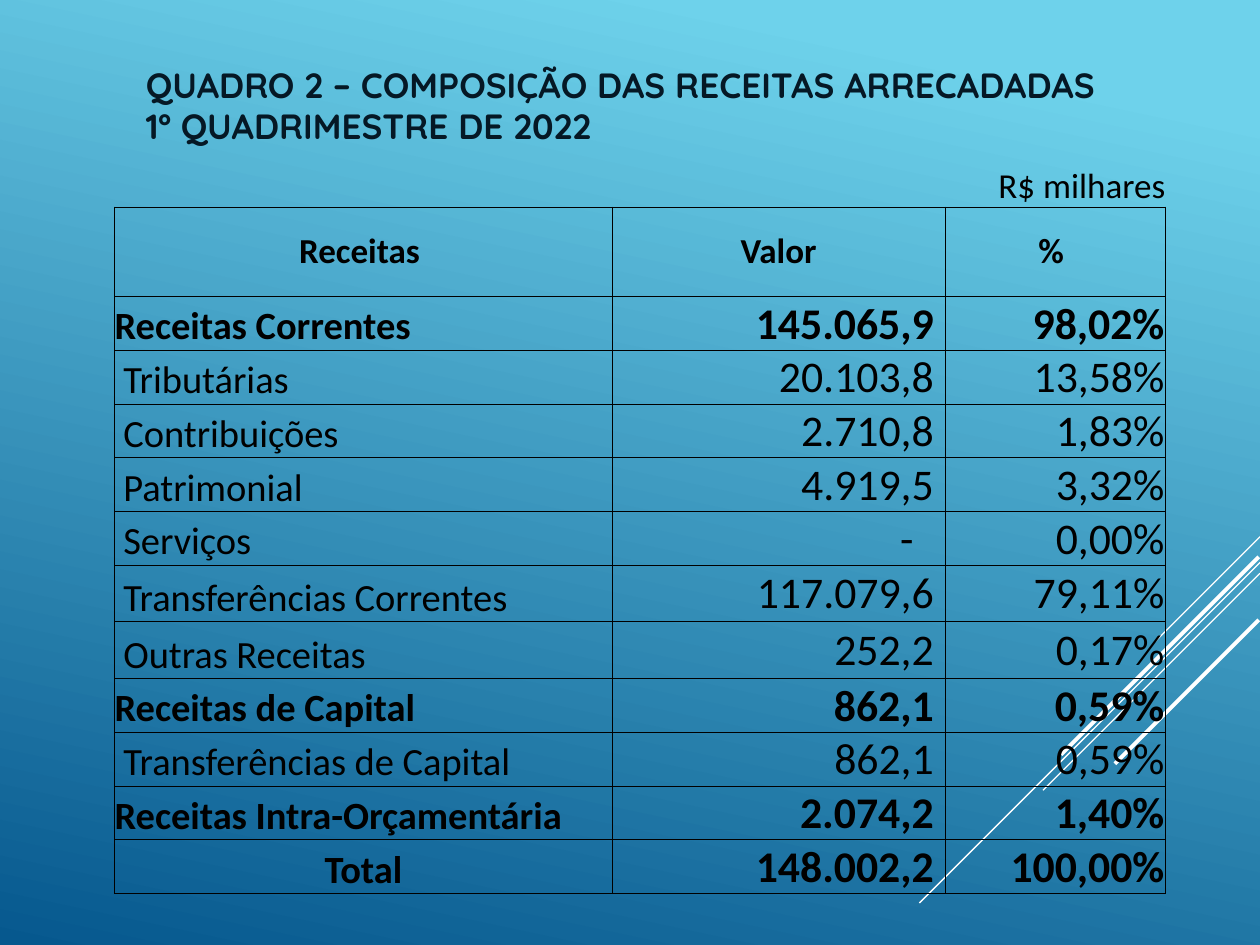
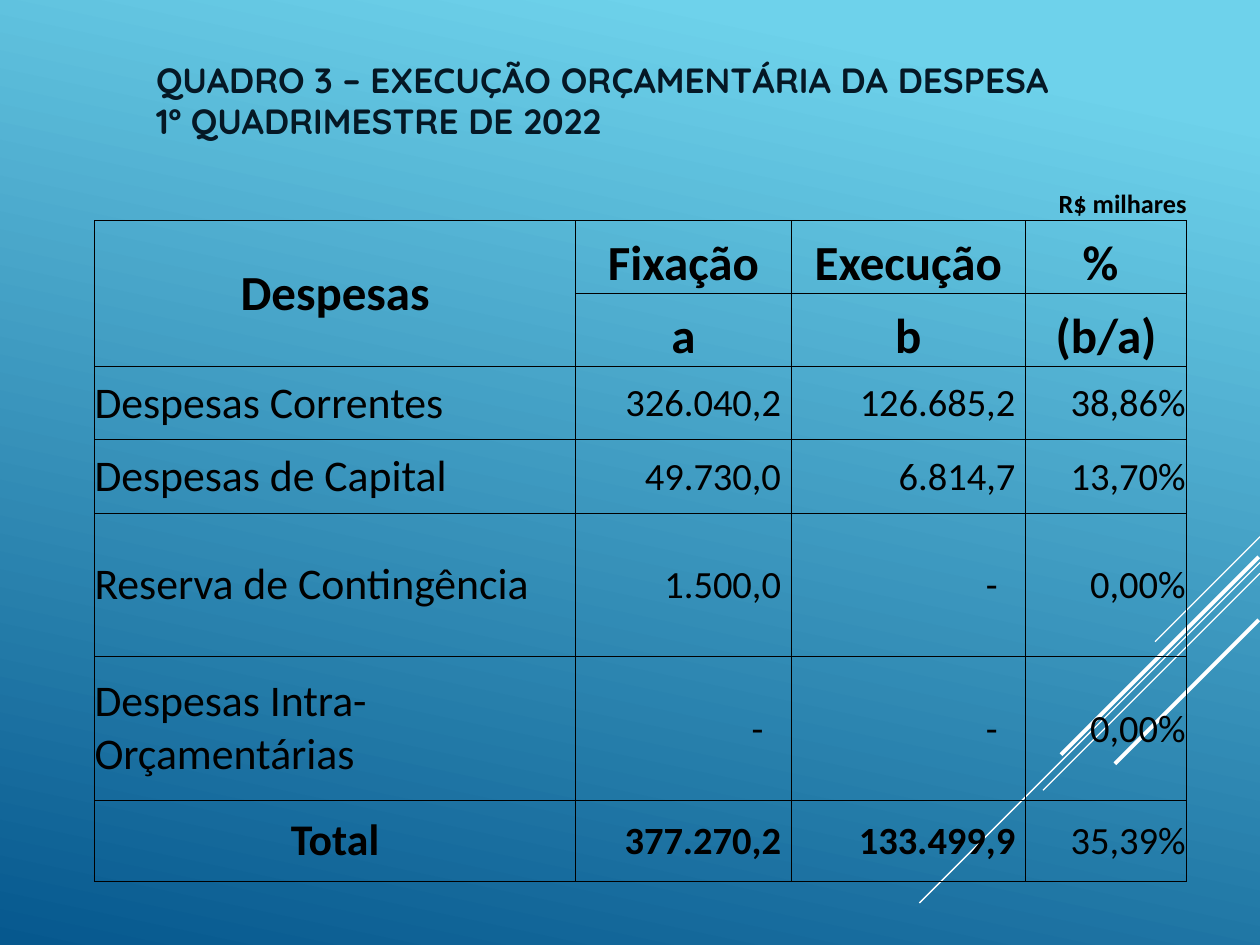
from dataclasses import dataclass

from lxml.etree import SubElement
from pptx import Presentation
from pptx.dml.color import RGBColor
from pptx.enum.shapes import MSO_CONNECTOR
from pptx.enum.text import MSO_ANCHOR, PP_ALIGN
from pptx.oxml import parse_xml
from pptx.oxml.ns import nsdecls, qn
from pptx.util import Pt


@dataclass(frozen=True)
class Theme:
    sky: RGBColor = RGBColor(0x6E, 0xD2, 0xEB)
    deep: RGBColor = RGBColor(0x06, 0x58, 0x8E)
    title: RGBColor = RGBColor(0x05, 0x18, 0x25)
    ink: RGBColor = RGBColor(0, 0, 0)
    stripe: RGBColor = RGBColor(0xFF, 0xFF, 0xFF)
    title_font: str = "Quicksand"
    table_font: str = "Calibri"
    title_size: int = 20
    grid_width: float = 0.5


THEME = Theme()
NO_STYLE = "{2D5ABB26-0587-4C30-8999-92F81FD0307C}"
LEFT, CENTER, RIGHT = PP_ALIGN.LEFT, PP_ALIGN.CENTER, PP_ALIGN.RIGHT
MIDDLE, BOTTOM = MSO_ANCHOR.MIDDLE, MSO_ANCHOR.BOTTOM
UNIT = "R$ milhares"

# Diagonal stripes: right end, horizontal reach (all at 45 degrees), width
STRIPES = [
    (720, 306.7, 60, 0.75),
    (720, 321.4, 194.6, 0.75),
    (720, 327.6, 124, 0.75),
    (719.3, 318.2, 113, 2.25),
    (719.3, 354.2, 82.2, 2.25),
]

# Label, value, share, whether the row is a heading
REVENUES = [
    ("Receitas Correntes", "145.065,9", "98,02%", True),
    ("Tributárias", "20.103,8", "13,58%", False),
    ("Contribuições", "2.710,8", "1,83%", False),
    ("Patrimonial", "4.919,5", "3,32%", False),
    ("Serviços", "-", "0,00%", False),
    ("Transferências Correntes", "117.079,6", "79,11%", False),
    ("Outras Receitas", "252,2", "0,17%", False),
    ("Receitas de Capital", "862,1", "0,59%", True),
    ("Transferências de Capital", "862,1", "0,59%", False),
    ("Receitas Intra-Orçamentária", "2.074,2", "1,40%", True),
    ("Total", "148.002,2", "100,00%", True),
]

# Label, budget, execution, share
EXPENSES = [
    ("Despesas Correntes", "326.040,2", "126.685,2", "38,86%"),
    ("Despesas de Capital", "49.730,0", "6.814,7", "13,70%"),
    ("Reserva de Contingência", "1.500,0", "-", "0,00%"),
    ("Despesas Intra-Orçamentárias", "-", "-", "0,00%"),
    ("Total", "377.270,2", "133.499,9", "35,39%"),
]


def add_page(deck):
    """Blank page with the gradient and the diagonal stripes."""
    page = deck.slides.add_slide(deck.slide_layouts[6])
    fill = page.background.fill
    fill.gradient()
    fill.gradient_angle = 258
    stops = [(0.1, THEME.sky), (1, THEME.deep)]
    for stop, (position, color) in zip(fill.gradient_stops, stops):
        stop.position = position
        stop.color.rgb = color
    for x, y, reach, width in STRIPES:
        stripe = page.shapes.add_connector(
            MSO_CONNECTOR.STRAIGHT, Pt(x), Pt(y), Pt(x - reach), Pt(y + reach))
        stripe.line.color.rgb = THEME.stripe
        stripe.line.width = Pt(width)
        SubElement(stripe._element.spPr, qn("a:effectLst"))
    return page


def add_title(page, bounds, text):
    box = page.shapes.add_textbox(*map(Pt, bounds))
    frame = box.text_frame
    frame.word_wrap = True
    frame.vertical_anchor = MIDDLE
    para = frame.paragraphs[0]
    para.text = text
    para.line_spacing = 0.96
    para.font.name = THEME.title_font
    para.font.size = Pt(THEME.title_size)
    para.font.bold = True
    para.font.color.rgb = THEME.title


def draw_borders(cell, sides):
    properties = cell._tc.get_or_add_tcPr()
    for index, side in enumerate(sides):
        properties.insert(index, parse_xml(
            f'<a:ln{side} {nsdecls("a")} w="{Pt(THEME.grid_width)}">'
            f'<a:solidFill><a:srgbClr val="{THEME.ink}"/></a:solidFill></a:ln{side}>'))


def add_grid(page, left, top, widths, heights):
    """Unfilled table whose first row is open apart from its lower edge."""
    holder = page.shapes.add_table(
        len(heights), len(widths), Pt(left), Pt(top), Pt(sum(widths)), Pt(sum(heights)))
    table = holder.table
    table.first_row = table.horz_banding = False
    table._tbl.tblPr.find(qn("a:tableStyleId")).text = NO_STYLE
    for column, width in zip(table.columns, widths):
        column.width = Pt(width)
    for index, (row, height) in enumerate(zip(table.rows, heights)):
        row.height = Pt(height)
        for cell in row.cells:
            cell.fill.background()
            draw_borders(cell, "LRTB" if index else "B")
            write_cell(cell, "", 10)
    return table


def write_cell(cell, text, size, bold=False, align=LEFT, anchor=MIDDLE, insets=(0, 0, 0)):
    cell.margin_left, cell.margin_top, cell.margin_right = map(Pt, insets)
    cell.margin_bottom = 0
    cell.vertical_anchor = anchor
    para = cell.text_frame.paragraphs[0]
    para.text = text
    para.alignment = align
    para.font.name = THEME.table_font
    para.font.size = Pt(size)
    para.font.bold = bold
    para.font.color.rgb = THEME.ink


def write_number(cell, text, size, bold, gap=0.23):
    """Right-aligned figure; the gap to the right edge is in ems."""
    if text == "-":
        gap *= 3
    write_cell(cell, text, size, bold, RIGHT, insets=(0.7, 0.7, 0.7 + gap * size))


def merge_across(table, row, *starts):
    for start in starts:
        table.cell(row, start).merge(table.cell(row, start + 1))


def fill_revenues(page, left, top):
    heights = [23.8, 51.1] + [30.2] * 5 + [32.4] * 2 + [30.2] * 4
    table = add_grid(page, left, top, [284.4, 64.8, 125.3, 126], heights)
    write_cell(table.cell(0, 3), UNIT, 20, align=RIGHT, anchor=BOTTOM)
    # Header
    merge_across(table, 1, 1)
    for column, text in [(0, "Receitas "), (1, "Valor"), (3, "% ")]:
        write_cell(table.cell(1, column), text, 20, True, CENTER)
    # Body
    for row, (label, value, share, heading) in enumerate(REVENUES, 2):
        merge_across(table, row, 1)
        align = CENTER if label == "Total" else LEFT
        indent = 0 if heading else 5
        write_cell(table.cell(row, 0), label, 22, heading, align, BOTTOM, (indent, 0, 0))
        write_number(table.cell(row, 1), value, 25, heading)
        write_number(table.cell(row, 3), share, 25, heading, 0)


def fill_expenses(page, left, top):
    heights = [59.8] + [41.8] * 4 + [82.1] * 2 + [46.1]
    widths = [275, 8.6, 114.5, 65.5, 68.4, 92.2]
    table = add_grid(page, left, top, widths, heights)
    write_cell(table.cell(0, 5), UNIT, 15, True, RIGHT, BOTTOM)
    # Two-line header
    table.cell(1, 0).merge(table.cell(2, 0))
    write_cell(table.cell(1, 0), "Despesas", 28, True, CENTER)
    for row, texts in enumerate([("Fixação", "Execução", "% "), ("a", "b", "(b/a)")], 1):
        merge_across(table, row, 1, 3)
        for column, text in zip((1, 3, 5), texts):
            write_cell(table.cell(row, column), text, 28, True, CENTER, BOTTOM)
    # Body
    for row, (label, budget, execution, share) in enumerate(EXPENSES, 3):
        merge_across(table, row, 1, 3)
        total = label == "Total"
        write_cell(table.cell(row, 0), label, 25, total, CENTER if total else LEFT)
        write_number(table.cell(row, 1), budget, 22, total)
        write_number(table.cell(row, 3), execution, 22, total)
        write_number(table.cell(row, 5), share, 22, False, 0)


def main():
    deck = Presentation()
    deck.slide_width, deck.slide_height = Pt(720), Pt(540)

    page = add_page(deck)
    add_title(page, (76.3, 43.2, 646.6, 36),
              "QUADRO 2 – COMPOSIÇÃO DAS RECEITAS ARRECADADAS\v1º QUADRIMESTRE DE 2022")
    fill_revenues(page, 65.5, 94.3)

    page = add_page(deck)
    add_title(page, (82.1, 31.7, 612, 53.3),
              "QUADRO 3 – EXECUÇÃO ORÇAMENTÁRIA DA DESPESA\v1º QUADRIMESTRE DE 2022")
    fill_expenses(page, 54, 66.2)

    deck.save("out.pptx")


if __name__ == "__main__":
    main()
